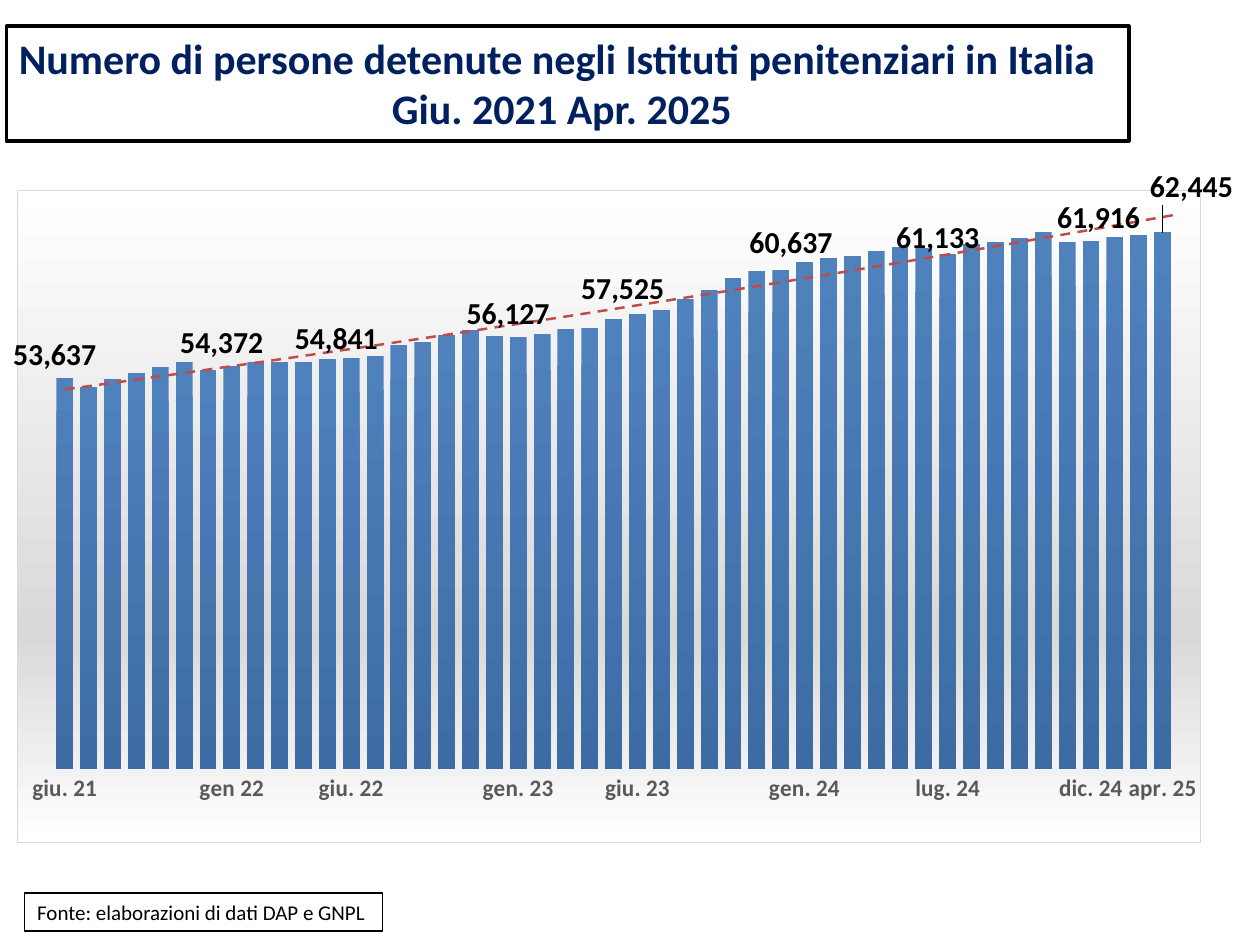
from dataclasses import dataclass

from lxml.etree import SubElement
from pptx import Presentation
from pptx.chart.data import CategoryChartData
from pptx.dml.color import RGBColor
from pptx.enum.chart import XL_CHART_TYPE, XL_LABEL_POSITION, XL_TICK_MARK
from pptx.enum.text import MSO_ANCHOR, MSO_AUTO_SIZE, PP_ALIGN
from pptx.oxml import parse_xml
from pptx.oxml.ns import nsdecls, qn
from pptx.util import Cm, Pt


@dataclass(frozen=True)
class Theme:
    font: str = "Calibri"
    title: str = "002060"
    ink: str = "000000"
    paper: str = "FFFFFF"
    axis: str = "595959"
    border: str = "D9D9D9"
    bar: str = "4F81BD"
    bar_dark: str = "3D6CA4"
    trend: str = "BF4C48"
    highlight: str = "DCE6F2"
    title_size: int = 24
    label_size: int = 18
    axis_size: int = 14
    source_size: int = 12
    chart_size: int = 11


THEME = Theme()
NUMBER_FORMAT = '_-* #,##0\\ _€_-;\\-* #,##0\\ _€_-;_-* "-"?'

INMATES = [
    53637, 53129, 53557, 53930, 54307, 54593, 54134, 54372, 54635, 54609,
    54595, 54771, 54841, 54979, 55637, 55835, 56225, 56524, 56196, 56127,
    56319, 56605, 56674, 57230, 57525, 57749, 58428, 58987, 59715, 60116,
    60166, 60637, 60924, 61049, 61297, 61547, 61480, 61133, 61758, 61862,
    62110, 62464, 61861, 61916, 62165, 62281, 62445,
]

# Month index: (month name, label shift as fractions of the chart)
MILESTONES = {
    0: ("giu. 21", (0, 0)),
    7: ("gen 22", (0, 0)),
    12: ("giu. 22", (-0.004, 0.006)),
    19: ("gen. 23", (0, 0)),
    24: ("giu. 23", (-0.004, -0.003)),
    31: ("gen. 24", (-0.003, 0.005)),
    37: ("lug. 24", (0, 0.01)),
    43: ("dic. 24", (0.015, 0)),
    46: ("apr. 25", (0.033, -0.034)),
}


def format_font(font, size, color=THEME.ink, bold=False):
    font.name = THEME.font
    font.size = Pt(size)
    font.bold = bold
    font.color.rgb = RGBColor.from_string(color)


def write_text(paragraph, text, align=None, **font_format):
    paragraph.alignment = align
    run = paragraph.add_run()
    run.text = text
    format_font(run.font, **font_format)


def add_framed_text(slide, box, lines, line_width, **font_format):
    """Add a white bordered box; lines holds (text, alignment) pairs."""
    framed = slide.shapes.add_textbox(*map(Cm, box))
    framed.fill.solid()
    framed.fill.fore_color.rgb = RGBColor.from_string(THEME.paper)
    framed.line.color.rgb = RGBColor.from_string(THEME.ink)
    framed.line.width = Pt(line_width)
    frame = framed.text_frame
    frame.word_wrap = False
    frame.auto_size = MSO_AUTO_SIZE.SHAPE_TO_FIT_TEXT
    frame.vertical_anchor = MSO_ANCHOR.TOP
    for number, (text, align) in enumerate(lines):
        paragraph = frame.add_paragraph() if number else frame.paragraphs[0]
        write_text(paragraph, text, align, **font_format)


def chart_xml(tag, content):
    return parse_xml(f"<c:{tag} {nsdecls('c', 'a')}>{content}</c:{tag}>")


def solid_xml(color):
    return f'<a:solidFill><a:srgbClr val="{color}"/></a:solidFill>'


def line_xml(color, points, dash="solid"):
    return (f'<a:ln w="{Pt(points)}">{solid_xml(color)}'
            f'<a:prstDash val="{dash}"/></a:ln>')


def gradient_xml(*stops):
    """Vertical gradient from (percent, colour) stops."""
    marks = "".join(f'<a:gs pos="{percent * 1000}"><a:srgbClr val="{color}"/></a:gs>'
                    for percent, color in stops)
    return f'<a:gradFill><a:gsLst>{marks}</a:gsLst><a:lin ang="5400000" scaled="0"/></a:gradFill>'


def layout_xml(**settings):
    content = "".join(f'<c:{key} val="{value}"/>' for key, value in settings.items())
    return chart_xml("layout", f"<c:manualLayout>{content}</c:manualLayout>")


def style_chart_area(chart):
    space = chart._chartSpace
    background = gradient_xml((0, THEME.paper), (68, THEME.border), (100, THEME.paper))
    space.chart.addnext(chart_xml("spPr", background + line_xml(THEME.border, 0.75)))
    plot_area = space.chart.plotArea
    for layout in plot_area.findall(qn("c:layout")):
        plot_area.remove(layout)
    plot_area.insert(0, layout_xml(layoutTarget="inner", xMode="edge", yMode="edge",
                                   x=0.03, y=0, w=0.948, h=0.888))


def style_axes(chart):
    months = chart.category_axis
    months.major_tick_mark = months.minor_tick_mark = XL_TICK_MARK.NONE
    months.format.line.fill.background()
    format_font(months.tick_labels.font, THEME.axis_size, THEME.axis, True)
    months._element.txPr.find(qn("a:bodyPr")).set("rot", "-60000000")
    skip = SubElement(months._element, qn("c:tickLblSkip"))
    skip.set("val", "1")
    months._element.find(qn("c:noMultiLvlLbl")).addprevious(skip)

    inmates = chart.value_axis
    inmates.minimum_scale, inmates.maximum_scale = 30000, 65000
    inmates.has_major_gridlines = False
    inmates.tick_labels.number_format = NUMBER_FORMAT
    inmates.tick_labels.number_format_is_linked = False
    inmates.visible = False


def label_milestones(series):
    labels = series.data_labels
    labels.show_value = False
    labels._element.append(parse_xml(
        f'<c:extLst {nsdecls("c")}><c:ext uri="{{CE6537A1-D6FC-4f65-9D91-7224C49458BB}}" '
        'xmlns:c15="http://schemas.microsoft.com/office/drawing/2012/chart">'
        '<c15:showLeaderLines val="1"/></c:ext></c:extLst>'))
    last = max(MILESTONES)
    for month, (_, (shift_x, shift_y)) in MILESTONES.items():
        label = series.points[month].data_label
        format_font(label.font, THEME.label_size, bold=True)
        label.position = XL_LABEL_POSITION.OUTSIDE_END
        fill = THEME.highlight if month == last else THEME.paper
        number = chart_xml("numFmt", "")
        number.set("formatCode", NUMBER_FORMAT)
        number.set("sourceLinked", "0")
        parts = [number, chart_xml("spPr", solid_xml(fill) + line_xml(THEME.bar, 2))]
        if shift_x or shift_y:
            parts.insert(0, layout_xml(x=shift_x, y=shift_y))
        label._get_or_add_dLbl()[1:1] = parts


def add_trend(series):
    trend = chart_xml("trendline", (
        f'<c:spPr>{line_xml(THEME.trend, 1.5, "dash")}</c:spPr>'
        '<c:trendlineType val="poly"/><c:order val="2"/><c:forward val="0.5"/>'
        '<c:dispRSqr val="0"/><c:dispEq val="0"/>'))
    series._element.find(qn("c:cat")).addprevious(trend)


def add_inmates_chart(slide):
    data = CategoryChartData()
    data.categories = [MILESTONES.get(month, ("",))[0] for month in range(len(INMATES))]
    data.add_series("Series 1", INMATES)
    chart = slide.shapes.add_chart(XL_CHART_TYPE.COLUMN_CLUSTERED, Cm(0.13), Cm(3.4),
                                   Cm(25.27), Cm(13.59), data).chart
    chart.has_legend = False
    chart.has_title = False
    format_font(chart.font, THEME.chart_size)
    style_chart_area(chart)
    style_axes(chart)
    plot = chart.plots[0]
    plot.gap_width = 41
    plot.vary_by_categories = False
    series = plot.series[0]
    series._element.get_or_add_spPr().append(
        parse_xml(gradient_xml((0, THEME.bar), (100, THEME.bar_dark)).replace(
            "<a:gradFill>", f"<a:gradFill {nsdecls('a')}>")))
    label_milestones(series)
    add_trend(series)


def main():
    deck = Presentation()
    deck.slide_width, deck.slide_height = Cm(25.4), Cm(19.05)
    slide = deck.slides.add_slide(deck.slide_layouts[6])
    add_framed_text(slide, (0.13, 0.53, 22.63, 2.31), [
        ("Numero di persone detenute negli Istituti penitenziari in Italia", None),
        (" Giu. 2021 Apr. 2025", PP_ALIGN.CENTER),
    ], 2, size=THEME.title_size, color=THEME.title, bold=True)
    add_framed_text(slide, (0.5, 18, 7.21, 0.77),
                    [("Fonte: elaborazioni di dati DAP e GNPL", None)],
                    0.75, size=THEME.source_size)
    add_inmates_chart(slide)
    deck.save("out.pptx")


if __name__ == "__main__":
    main()
